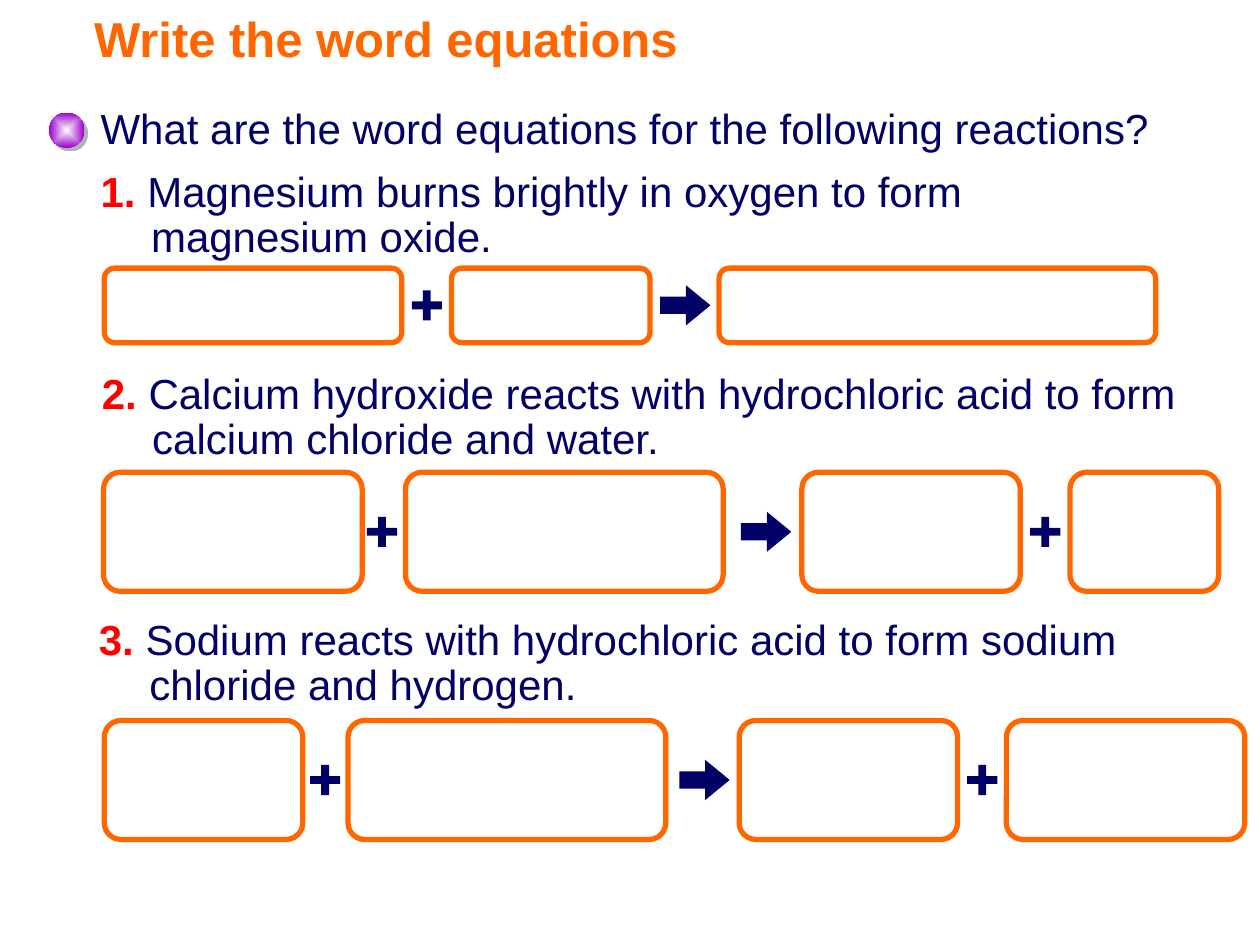
from lxml import etree
from pptx import Presentation
from pptx.dml.color import RGBColor
from pptx.enum.shapes import MSO_SHAPE
from pptx.enum.text import MSO_ANCHOR
from pptx.oxml import parse_xml
from pptx.oxml.ns import qn
from pptx.util import Pt

BOX = MSO_SHAPE.ROUNDED_RECTANGLE
PLUS = MSO_SHAPE.CROSS
ARROW = MSO_SHAPE.RIGHT_ARROW
OVAL = MSO_SHAPE.OVAL
MIDDLE = MSO_ANCHOR.MIDDLE

NS = "http://schemas.openxmlformats.org/drawingml/2006/main"
ORANGE, NAVY, RED, WHITE = "FF6600", "010066", "FF0000", "FFFFFF"
INK = "010067"
PLUS_SIZE = 17.2
ARROW_W, ARROW_H = 28.8, 23

ITEMS = [
    ("1. ", "Magnesium burns brightly in oxygen to form magnesium oxide.",
     (50.4, 94.3, 589.7, 59)),
    ("2. ", "Calcium hydroxide reacts with hydrochloric acid to form "
     "calcium chloride and water.", (51.1, 209.5, 668.9, 71.3)),
    ("3. ", "Sodium reacts with hydrochloric acid to form sodium "
     "chloride and hydrogen.", (49.4, 350, 680.4, 71.3)),
]

ROWS = [
    (153.2, 42.6, [(59.6, 170), (258, 113.4), (410.9, 249.5)],
     [235.3], 377.2),
    (269.9, 68, [(59.2, 147.8), (231.7, 181.6), (458.2, 124.8), (611.4, 85)],
     [209.7, 588.7], 423.4),
    (411.7, 68, [(59.6, 113.4), (198.9, 181.6), (422.4, 124.8), (575.1, 136.2)],
     [177.2, 552.7], 388.2),
]


def color(text):
    return RGBColor.from_string(text)


def style(font, size, ink, bold=False):
    font.name = "Arial"
    font.size = Pt(size)
    font.bold = bold
    font.color.rgb = color(ink)


def frame(slide, left, top, width, height):
    box = slide.shapes.add_textbox(Pt(left), Pt(top), Pt(width), Pt(height))
    box.text_frame.word_wrap = True
    return box.text_frame


def title(slide, text):
    area = frame(slide, 0, 0, 513.4, 43.2)
    area.margin_left = Pt(53.8)
    area.vertical_anchor = MIDDLE
    para = area.paragraphs[0]
    para.text = text
    style(para.font, 28, ORANGE, True)


def prompt(slide, text):
    para = frame(slide, 50.4, 58.3, 652.3, 34.6).paragraphs[0]
    para.text = text
    para.line_spacing = 0.9
    style(para.font, 24, INK)


def item(slide, label, text, place):
    para = frame(slide, *place).paragraphs[0]
    para.line_spacing = 0.9
    props = para._p.get_or_add_pPr()
    props.set("marL", str(Pt(28.8)))
    props.set("indent", str(-Pt(28.8)))
    for words, ink, bold in ((label, RED, True), (text, NAVY, False)):
        run = para.add_run()
        run.text = words
        style(run.font, 24, ink, bold)


def shape(slide, kind, left, top, width, height, fill, adjust=(), line=None):
    form = slide.shapes.add_shape(
        kind, Pt(left), Pt(top), Pt(width), Pt(height))
    form.shadow.inherit = False
    for index, value in enumerate(adjust):
        form.adjustments[index] = value
    form.fill.solid()
    form.fill.fore_color.rgb = color(fill)
    if line:
        form.line.color.rgb = color(line)
        form.line.width = Pt(3)
    else:
        form.line.fill.background()
    return form


def bullet(slide):
    ball = shape(slide, OVAL, 28, 64.3, 20.2, 20.2, "9900CC")
    props = ball._element.spPr
    glow = parse_xml(
        f'<a:gradFill xmlns:a="{NS}" rotWithShape="1"><a:gsLst>'
        '<a:gs pos="0"><a:srgbClr val="FFFFFF"/></a:gs>'
        '<a:gs pos="100000"><a:srgbClr val="9900CC"/></a:gs></a:gsLst>'
        '<a:path path="shape"><a:fillToRect l="50000" t="50000" '
        'r="50000" b="50000"/></a:path></a:gradFill>')
    props.replace(props.find(qn("a:solidFill")), glow)
    shade = etree.SubElement(
        props.find(qn("a:effectLst")), qn("a:outerShdw"),
        dist=str(Pt(2.8)), dir="2700000", algn="ctr", rotWithShape="0")
    etree.SubElement(shade, qn("a:srgbClr"), val="B2B2B2")


def equation(slide, top, height, boxes, pluses, arrow):
    mid = top + height / 2
    for left, width in boxes:
        shape(slide, BOX, left, top, width, height, WHITE, [0.14], ORANGE)
    for left in pluses:
        shape(slide, PLUS, left, mid - PLUS_SIZE / 2, PLUS_SIZE, PLUS_SIZE,
              INK, [0.37])
    shape(slide, ARROW, arrow, mid - ARROW_H / 2, ARROW_W, ARROW_H,
          INK, [0.43, 0.61])


def main():
    deck = Presentation()
    deck.slide_width, deck.slide_height = Pt(720), Pt(540)
    slide = deck.slides.add_slide(deck.slide_layouts[6])
    title(slide, "Write the word equations")
    bullet(slide)
    prompt(slide, "What are the word equations for the following reactions?")
    for entry, row in zip(ITEMS, ROWS):
        item(slide, *entry)
        equation(slide, *row)
    deck.save("out.pptx")


if __name__ == "__main__":
    main()
